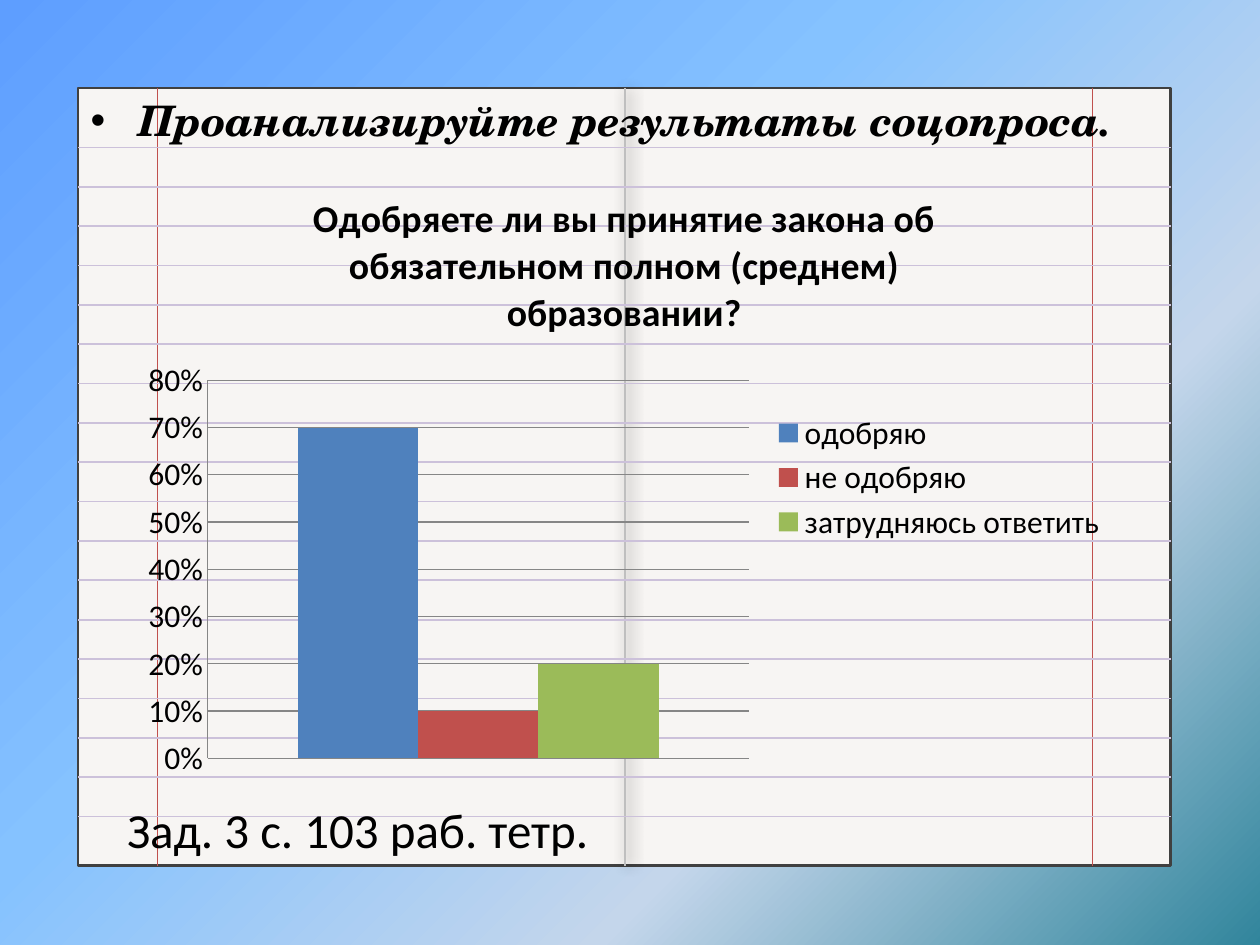
import pptx
import pptx.chart.data
import pptx.dml.color
import pptx.enum.chart
import pptx.enum.dml
import pptx.enum.shapes
import pptx.enum.text
import pptx.oxml
import pptx.oxml.ns
import pptx.util
from lxml import etree
from pptx.util import Inches, Pt

HEADING = "Проанализируйте результаты соцопроса."
HOMEWORK = "Зад. 3 с. 103 раб. тетр."
QUESTION = "Одобряете ли вы принятие закона об обязательном полном (среднем) образовании?"
ANSWERS = [
    ("одобряю", 0.7, "blue"),
    ("не одобряю", 0.1, "red"),
    ("затрудняюсь ответить", 0.2, "green"),
]
COLORS = {
    "paper": "F7F5F3", "border": "404040", "fold": "BFBFBF", "rule": "CCC1DA",
    "text": "000000", "grid": "868686",
    "blue": "4F81BD", "red": "C0504D", "green": "9BBB59",
}
BACKGROUND_STOPS = [(0, "5E9EFF"), (40, "85C2FF"), (70, "C4D6EB"), (100, "31859C")]
PAGE_LEFT, PAGE_TOP, PAGE_WIDTH, PAGE_HEIGHT = 0.62, 0.7, 8.67, 6.17
PAGE_RIGHT, PAGE_BOTTOM = PAGE_LEFT + PAGE_WIDTH, PAGE_TOP + PAGE_HEIGHT
FOLD_X = 4.96
MARGINS = [1.25, 8.67]
RULE_COUNT, FIRST_RULE, LAST_RULE = 18, 1.17, 6.48
NAMESPACE = pptx.oxml.ns.nsdecls("a", "p")


def color(name):
    return pptx.dml.color.RGBColor.from_string(COLORS[name])


def set_background(slide):
    stops = "".join(
        f'<a:gs pos="{position * 1000}"><a:srgbClr val="{value}"/></a:gs>'
        for position, value in BACKGROUND_STOPS
    )
    background = pptx.oxml.parse_xml(
        f'<p:bg {NAMESPACE}><p:bgPr><a:gradFill rotWithShape="1"><a:gsLst>{stops}</a:gsLst>'
        '<a:lin ang="2700000" scaled="0"/></a:gradFill><a:effectLst/></p:bgPr></p:bg>'
    )
    slide.element.cSld.insert(0, background)


def add_line(shapes, start, end, name):
    line = shapes.add_connector(
        pptx.enum.shapes.MSO_CONNECTOR.STRAIGHT, *map(Inches, start + end)
    )
    line.line.color.rgb = color(name)
    line.line.width = Pt(1)
    effects = etree.SubElement(line.element.spPr, pptx.oxml.ns.qn("a:effectLst"))
    return effects


def add_notebook(slide):
    page = slide.shapes.add_shape(
        pptx.enum.shapes.MSO_SHAPE.RECTANGLE,
        *map(Inches, (PAGE_LEFT, PAGE_TOP, PAGE_WIDTH, PAGE_HEIGHT)),
    )
    page.shadow.inherit = False
    page.fill.solid()
    page.fill.fore_color.rgb = color("paper")
    page.line.color.rgb = color("border")
    page.line.width = Pt(1.5)

    effects = add_line(slide.shapes, (FOLD_X, PAGE_TOP), (FOLD_X, PAGE_BOTTOM), "fold")
    effects.append(pptx.oxml.parse_xml(
        f'<a:outerShdw {NAMESPACE} blurRad="101600" dist="25400" dir="0">'
        '<a:srgbClr val="000000"/></a:outerShdw>'
    ))
    for x in MARGINS:
        add_line(slide.shapes, (x, PAGE_TOP), (x, PAGE_BOTTOM), "red")

    rules = slide.shapes.add_group_shape()
    spacing = (LAST_RULE - FIRST_RULE) / (RULE_COUNT - 1)
    for index in range(RULE_COUNT):
        y = FIRST_RULE + index * spacing
        add_line(rules.shapes, (PAGE_RIGHT, y), (PAGE_LEFT, y), "rule")


def write_text(shape, text, font_name, size, emphasis=False):
    frame = shape.text_frame
    frame.text = text
    frame.word_wrap = True
    frame.auto_size = pptx.enum.text.MSO_AUTO_SIZE.SHAPE_TO_FIT_TEXT
    paragraph = frame.paragraphs[0]
    paragraph.space_before = Pt(0)
    font = paragraph.runs[0].font
    font.name, font.size = font_name, Pt(size)
    font.bold = font.italic = emphasis
    font.color.rgb = color("text")


def add_survey_chart(slide):
    data = pptx.chart.data.CategoryChartData(number_format="0%")
    data.categories = ["1"]
    for name, share, _ in ANSWERS:
        data.add_series(name, [share])
    chart = slide.shapes.add_chart(
        pptx.enum.chart.XL_CHART_TYPE.COLUMN_CLUSTERED,
        *map(Inches, (1.02, 1.31, 7.87, 4.96)), data,
    ).chart
    chart.font.name, chart.font.size = "Calibri", Pt(18)
    chart.font.color.rgb = color("text")

    chart.has_title = True
    chart.chart_title.include_in_layout = False
    chart.chart_title.text_frame.text = QUESTION
    font = chart.chart_title.text_frame.paragraphs[0].runs[0].font
    font.name, font.size, font.bold = "Calibri", Pt(21.6), True
    font.color.rgb = color("text")

    chart.has_legend = True
    chart.legend.position = pptx.enum.chart.XL_LEGEND_POSITION.RIGHT
    chart.legend.include_in_layout = False

    chart.category_axis.visible = False
    axis = chart.value_axis
    axis.minimum_scale, axis.maximum_scale, axis.major_unit = 0, 0.8, 0.1
    axis.major_tick_mark = pptx.enum.chart.XL_TICK_MARK.NONE
    axis.tick_labels.number_format = "0%"
    axis.tick_labels.number_format_is_linked = False
    axis.has_major_gridlines = True
    for line in (axis.format.line, axis.major_gridlines.format.line):
        line.color.rgb = color("grid")
        line.width = Pt(0.75)

    plot = chart.plots[0]
    plot.gap_width, plot.overlap = 150, 0
    plot.vary_by_categories = False
    for series, (_, _, name) in zip(plot.series, ANSWERS):
        series.format.fill.solid()
        series.format.fill.fore_color.rgb = color(name)


def main():
    presentation = pptx.Presentation()
    presentation.slide_width, presentation.slide_height = Inches(10), Inches(7.5)
    slide = presentation.slides.add_slide(presentation.slide_layouts[1])
    title, body = slide.placeholders
    title.element.getparent().remove(title.element)

    set_background(slide)
    add_notebook(slide)

    body.left, body.top = Inches(PAGE_LEFT), Inches(PAGE_TOP)
    body.width, body.height = Inches(PAGE_WIDTH), Inches(0.5)
    write_text(body, HEADING, "TeX Gyre Schola", 24, emphasis=True)
    body.element.getparent().append(body.element)

    add_survey_chart(slide)

    homework = slide.shapes.add_textbox(*map(Inches, (0.91, 6.3, 4.35, 0.57)))
    write_text(homework, HOMEWORK, "Calibri", 28)

    presentation.save("out.pptx")


if __name__ == "__main__":
    main()
